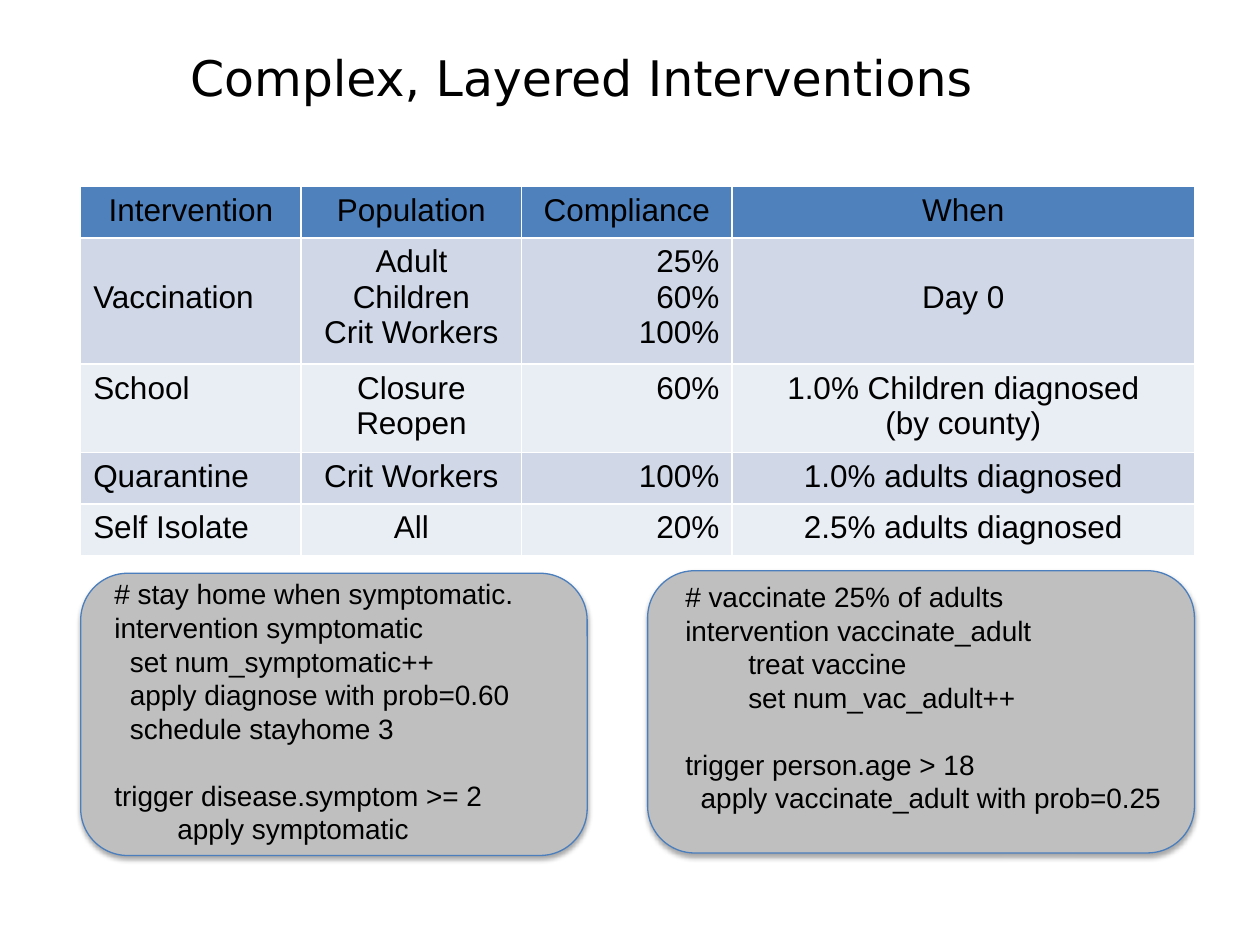
from typing import NamedTuple

from lxml.etree import SubElement as Sub
from pptx import Presentation
from pptx.dml.color import RGBColor as Rgb
from pptx.enum.shapes import MSO_SHAPE as Shape
from pptx.enum.text import PP_ALIGN as Align
from pptx.oxml.ns import qn
from pptx.util import Emu, Inches, Pt

HUES = {
    "text": "000000", "head": "4F81BD", "dark": "D0D8E8", "light": "E9EDF4",
    "edge": "FFFFFF", "card": "BFBFBF", "line": "4B7EBC", "shade": "000000",
}
COLS = (1.75, 1.75, 1.67, 3.67)
SIDES = (Align.LEFT, Align.CENTER, Align.RIGHT, Align.CENTER)


class Box(NamedTuple):
    left: float
    top: float
    width: float
    height: float

    def place(self) -> tuple[Emu, ...]:
        return tuple(Inches(n) for n in self)


class Row(NamedTuple):
    height: float
    fill: str
    cells: tuple[str, ...]


class Card(NamedTuple):
    frame: Box
    label: Box
    blocks: tuple[str, ...]


ROWS = (
    Row(0.41, "head", ("Intervention", "Population", "Compliance", "When")),
    Row(1, "dark", ("Vaccination", "Adult\nChildren\nCrit Workers",
                    "25%\n60%\n100%", "Day 0")),
    Row(0.7, "light", ("School", "Closure\nReopen", "60%",
                       "1.0% Children diagnosed\n(by county)")),
    Row(0.41, "dark", ("Quarantine", "Crit Workers", "100%",
                       "1.0% adults diagnosed")),
    Row(0.41, "light", ("Self Isolate", "All", "20%",
                        "2.5% adults diagnosed")),
)
CARDS = (
    Card(Box(0.64, 4.55, 4.02, 2.24), Box(0.81, 4.53, 4.48, 2.26), (
        "# stay home when symptomatic.\nintervention symptomatic\n"
        "  set num_symptomatic++\n  apply diagnose with prob=0.60\n"
        "  schedule stayhome 3",
        "trigger disease.symptom >= 2\n\tapply symptomatic")),
    Card(Box(5.14, 4.53, 4.34, 2.24), Box(5.34, 4.55, 4.48, 1.99), (
        "# vaccinate 25% of adults\nintervention vaccinate_adult\n"
        "\ttreat vaccine\n\tset num_vac_adult++",
        "trigger person.age > 18\n  apply vaccinate_adult with prob=0.25")),
)


def hue(name: str) -> Rgb:
    return Rgb.from_string(HUES[name])


def add_run(para, text: str, size: int, face: str = "Arial") -> None:
    run = para.add_run()
    run.text = text
    run.font.size = Pt(size)
    run.font.name = face
    run.font.color.rgb = hue("text")


def add_edges(cell) -> None:
    props = cell._tc.get_or_add_tcPr()
    for side in "LRTB":
        line = Sub(props, qn(f"a:ln{side}"), w=str(Pt(1)))
        fill = Sub(line, qn("a:solidFill"))
        Sub(fill, qn("a:srgbClr"), val=HUES["edge"])


def fill_cell(cell, text: str, fill: str, side: Align) -> None:
    add_edges(cell)
    cell.fill.solid()
    cell.fill.fore_color.rgb = hue(fill)
    for num, line in enumerate(text.split("\n")):
        frame = cell.text_frame
        para = frame.add_paragraph() if num else frame.paragraphs[0]
        para.alignment = side
        add_run(para, line, 18)


def draw_grid(slide, box: Box) -> None:
    table = slide.shapes.add_table(len(ROWS), len(COLS), *box.place()).table
    for col, width in zip(table.columns, COLS):
        col.width = Inches(width)
    for y, row in enumerate(ROWS):
        table.rows[y].height = Inches(row.height)
        for x, text in enumerate(row.cells):
            side = SIDES[x] if y else Align.CENTER
            fill_cell(table.cell(y, x), text, row.fill, side)
    for x in (0, 3):
        table.cell(1, x).margin_top = Inches(0.33)


def add_shade(shape) -> None:
    shape.shadow.inherit = False
    effects = shape._element.spPr.find(qn("a:effectLst"))
    shade = Sub(effects, qn("a:outerShdw"), blurRad=str(Pt(3.1)),
                dist=str(Pt(1.8)), dir="5400000", rotWithShape="0")
    color = Sub(shade, qn("a:srgbClr"), val=HUES["shade"])
    Sub(color, qn("a:alpha"), val="35000")


def add_tab(para) -> None:
    tabs = Sub(para._p.get_or_add_pPr(), qn("a:tabLst"))
    Sub(tabs, qn("a:tab"), pos=str(Inches(0.5)), algn="l")


def draw_card(slide, card: Card) -> None:
    shape = slide.shapes.add_shape(Shape.ROUNDED_RECTANGLE, *card.frame.place())
    shape.fill.solid()
    shape.fill.fore_color.rgb = hue("card")
    shape.line.color.rgb = hue("line")
    shape.line.width = Pt(0.75)
    add_shade(shape)
    frame = slide.shapes.add_textbox(*card.label.place()).text_frame
    frame.word_wrap = True
    para = frame.paragraphs[0]
    for part, block in enumerate(card.blocks):
        for num, line in enumerate(block.split("\n")):
            if part or num:
                para = frame.add_paragraph()
            if line.startswith("\t"):
                add_tab(para)
            if part and not num:
                para.space_before = Pt(19)
            add_run(para, line, 16)


def draw_title(slide, text: str, box: Box) -> None:
    frame = slide.shapes.add_textbox(*box.place()).text_frame
    frame.word_wrap = True
    frame.margin_top = Inches(0.08)
    add_run(frame.paragraphs[0], text, 28, "DejaVu Sans")


def main() -> None:
    """Build the interventions slide with its table and two code cards."""
    deck = Presentation()
    deck.slide_width, deck.slide_height = Inches(10), Inches(7.5)
    slide = deck.slides.add_slide(deck.slide_layouts[6])
    draw_title(slide, "Complex, Layered Interventions", Box(1.41, 0.3, 8.09, 0.71))
    draw_grid(slide, Box(0.64, 1.48, 8.83, 2.92))
    for card in CARDS:
        draw_card(slide, card)
    deck.save("out.pptx")


if __name__ == "__main__":
    main()
